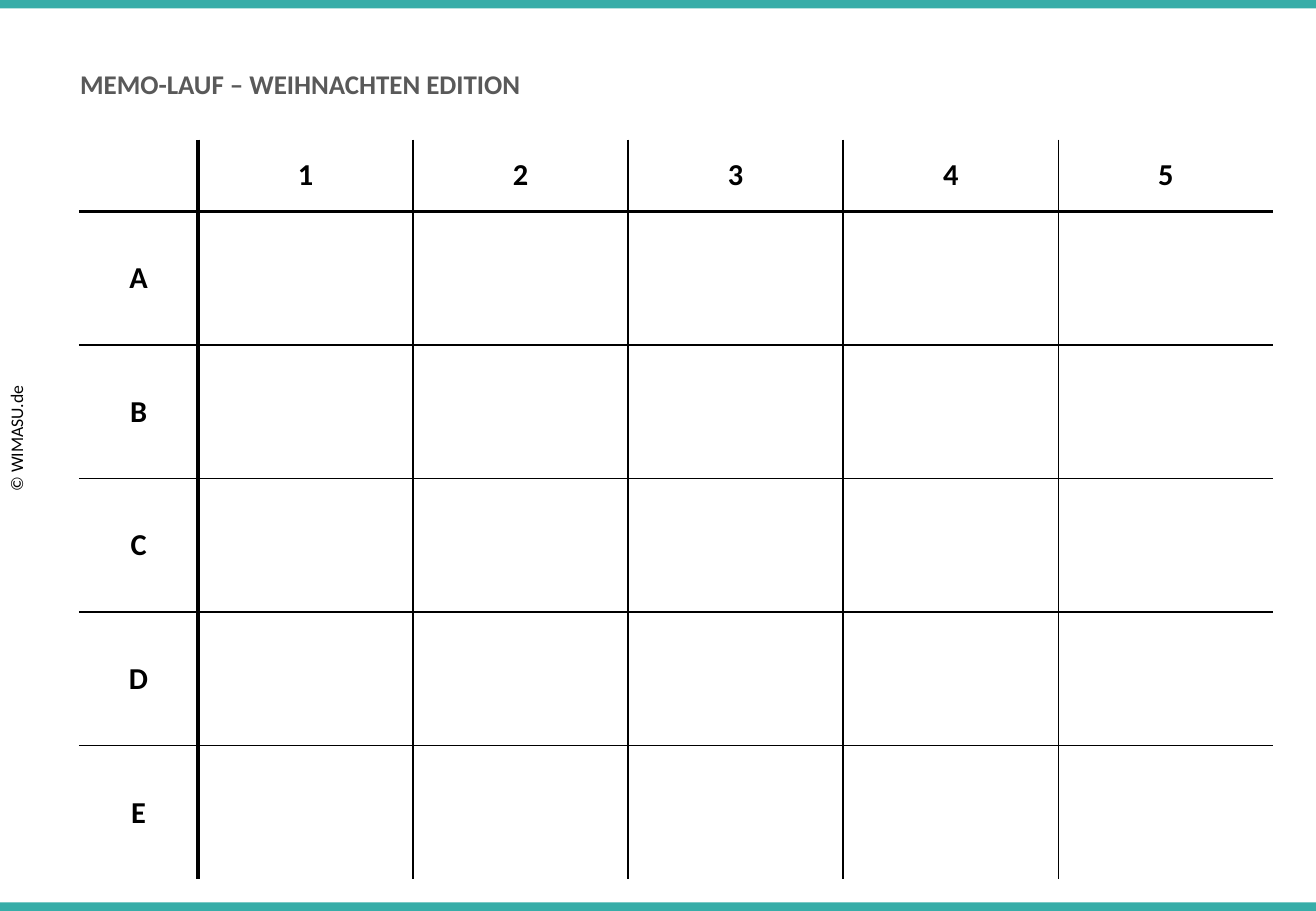
from dataclasses import dataclass

from lxml import etree
from pptx import Presentation
from pptx import util as u
from pptx.dml.color import RGBColor
from pptx.enum import shapes, text
from pptx.oxml import ns

PX = 9144  # EMU per px, 100 px to the inch


@dataclass(frozen=True)
class Theme:
    font: str = "Calibri"
    teal: str = "37ADA8"
    grey: str = "595959"
    black: str = "000000"
    white: str = "FFFFFF"
    title_size: float = 16
    label_size: float = 18
    credit_size: float = 10.5
    thin: float = 1
    header_rule: float = 2
    label_rule: float = 2.25


@dataclass(frozen=True)
class Area:
    left: int
    top: int
    width: int
    height: int

    def emu(self) -> tuple[int, int, int, int]:
        return (self.left * PX, self.top * PX, self.width * PX, self.height * PX)


THEME = Theme()
PAGE_WIDTH, PAGE_HEIGHT = 1083, 750
TITLE = Area(56, 43, 910, 45)
CREDIT = Area(-42, 344, 112, 29)
BARS = [Area(-1, top, 1085, 9) for top in (-2, 743)]
COLUMN_LABELS = "12345"
ROW_LABELS = "ABCDE"
COLUMN_WIDTHS = [98] + [177] * len(COLUMN_LABELS)
ROW_HEIGHTS = [59] + [110] * len(ROW_LABELS)
GRID = Area(65, 115, sum(COLUMN_WIDTHS), sum(ROW_HEIGHTS))


def write(frame, words: str, *, size: float, color: str = THEME.black, bold: bool = False,
          align=text.PP_ALIGN.LEFT, spacing: float = 1.0) -> None:
    para = frame.paragraphs[0]
    para.alignment = align
    para.line_spacing = spacing
    span = para.add_run()
    span.text = words
    span.font.name = THEME.font
    span.font.size = u.Pt(size)
    span.font.bold = bold
    span.font.color.rgb = RGBColor.from_string(color)


def add_title(page) -> None:
    box = page.shapes.title
    box.left, box.top, box.width, box.height = TITLE.emu()
    frame = box.text_frame
    frame.auto_size = text.MSO_AUTO_SIZE.NONE
    frame.vertical_anchor = text.MSO_ANCHOR.BOTTOM
    write(frame, "MEMO-LAUF – WEIHNACHTEN EDITION", size=THEME.title_size,
          color=THEME.grey, bold=True, spacing=0.9)


def add_bar(page, area: Area) -> None:
    bar = page.shapes.add_shape(shapes.MSO_SHAPE.RECTANGLE, *area.emu())
    bar.shadow.inherit = False
    bar.fill.solid()
    bar.fill.fore_color.rgb = RGBColor.from_string(THEME.teal)
    bar.line.fill.background()


def add_credit(page) -> None:
    box = page.shapes.add_textbox(*CREDIT.emu())
    box.rotation = 270
    box.text_frame.word_wrap = False
    write(box.text_frame, "© WIMASU.de", size=THEME.credit_size)


def set_border(cell, side: str, width: float) -> None:
    """Draw one side (L, R, T or B) of a cell; a width of 0 hides it."""
    properties = cell._tc.get_or_add_tcPr()
    line = etree.SubElement(properties, ns.qn(f"a:ln{side}"), w=str(u.Pt(width)))
    if width:
        fill = etree.SubElement(line, ns.qn("a:solidFill"))
        etree.SubElement(fill, ns.qn("a:srgbClr"), val=THEME.black)
    else:
        etree.SubElement(line, ns.qn("a:noFill"))


def rule_widths(count: int, first: float) -> list[float]:
    """Widths of the edges around count cells: open ends, a heavier first rule."""
    return [0, first] + [THEME.thin] * (count - 2) + [0]


def add_grid(page) -> None:
    columns, rows = len(COLUMN_WIDTHS), len(ROW_HEIGHTS)
    table = page.shapes.add_table(rows, columns, *GRID.emu()).table
    table.first_row = table.horz_banding = False
    for column, width in zip(table.columns, COLUMN_WIDTHS):
        column.width = width * PX
    for row, height in zip(table.rows, ROW_HEIGHTS):
        row.height = height * PX

    vertical = rule_widths(columns, THEME.label_rule)
    horizontal = rule_widths(rows, THEME.header_rule)
    for r in range(rows):
        for c in range(columns):
            cell = table.cell(r, c)
            cell.vertical_anchor = text.MSO_ANCHOR.MIDDLE
            set_border(cell, "L", vertical[c])
            set_border(cell, "R", vertical[c + 1])
            set_border(cell, "T", horizontal[r])
            set_border(cell, "B", horizontal[r + 1])
            cell.fill.solid()
            cell.fill.fore_color.rgb = RGBColor.from_string(THEME.white)

    labels = [(table.cell(0, c), label) for c, label in enumerate(COLUMN_LABELS, 1)]
    labels += [(table.cell(r, 0), label) for r, label in enumerate(ROW_LABELS, 1)]
    for cell, label in labels:
        write(cell.text_frame, label, size=THEME.label_size, bold=True,
              align=text.PP_ALIGN.CENTER)


def main() -> None:
    deck = Presentation()
    deck.slide_width, deck.slide_height = PAGE_WIDTH * PX, PAGE_HEIGHT * PX
    page = deck.slides.add_slide(deck.slide_layouts.get_by_name("Title Only"))
    add_title(page)
    for area in BARS:
        add_bar(page, area)
    add_credit(page)
    add_grid(page)
    deck.save("out.pptx")


if __name__ == "__main__":
    main()
